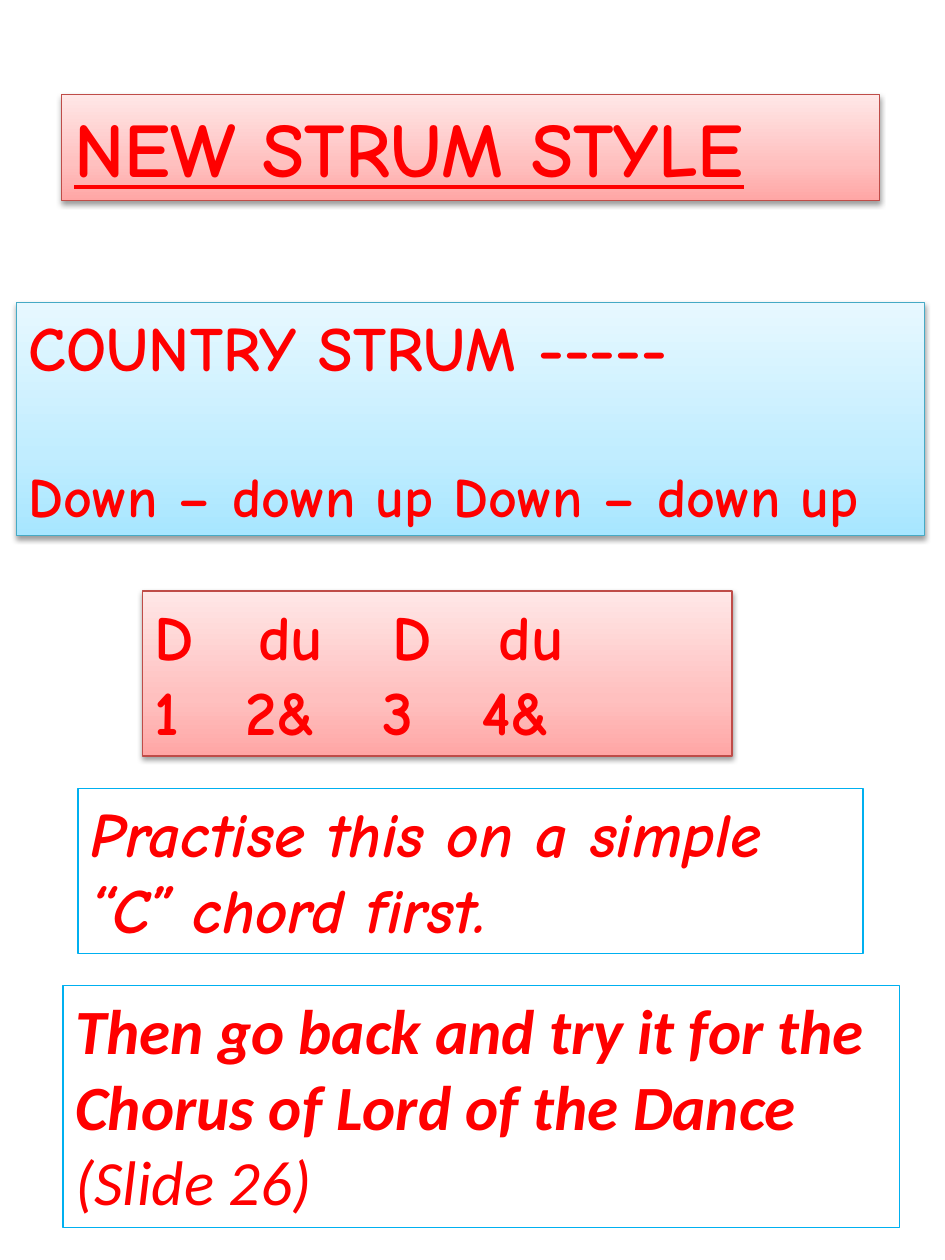
from copy import deepcopy

from lxml.etree import SubElement
from pptx import Presentation
from pptx.dml.color import RGBColor
from pptx.enum.text import MSO_ANCHOR, MSO_AUTO_SIZE, PP_ALIGN
from pptx.oxml.ns import qn
from pptx.util import Inches, Pt

COLORS = {"text": "FF0000", "red_line": "BF4C48", "blue_line": "46AAC5",
          "plain_line": "00B0F0", "shadow": "000000"}
RED = ("red_line", ((0, "FFA6A5"), (0.35, "FFC0BF"), (1, "FFE7E7")))
BLUE = ("blue_line", ((0, "A7E6FF"), (0.35, "C1EDFF"), (1, "E7F8FF")))
PLAIN = ("plain_line", ())
COMIC = "Comic Neue"
BOLD = {"bold": True}
ITALIC = {"bold": True, "italic": True}

TITLE = {"at": (0.49, 0.75, 6.49, 0.84), "look": RED, "font": COMIC,
         "lines": [("NEW STRUM STYLE", 44, {"bold": True, "underline": True})]}
BOXES = [
    {"at": (0.13, 2.4, 7.21, 1.85), "look": BLUE, "font": COMIC, "gap": 44,
     "lines": [("COUNTRY STRUM -----", 36, BOLD),
               ("Down – down up Down – down up", 32, BOLD)]},
    {"at": (1.13, 4.69, 4.68, 1.31), "look": RED, "font": COMIC,
     "tabs": [(0.82, 1.89, 2.73), (0.72, 1.81, 2.59)],
     "lines": [("D\tdu\tD\tdu", 36, BOLD), ("1\t2&\t3\t4&", 36, BOLD)]},
    {"at": (0.62, 6.26, 6.23, 1.31), "look": PLAIN, "font": COMIC,
     "lines": [("Practise this on a simple", 36, ITALIC),
               ("“C” chord first.", 36, ITALIC)]},
    {"at": (0.5, 7.82, 6.64, 1.92), "look": PLAIN, "font": "Calibri",
     "lines": [("Then go back and try it for the", 36, ITALIC),
               ("Chorus of Lord of the Dance", 36, ITALIC),
               ("(Slide 26)", 36, {"bold": False, "italic": True})]},
]


def rgb(name):
    return RGBColor.from_string(COLORS[name])


def add_shadow(shape):
    shape.shadow.inherit = False
    effects = shape._element.spPr.find(qn("a:effectLst"))
    shadow = SubElement(effects, qn("a:outerShdw"), blurRad=str(Pt(3.1)),
                        dist=str(Pt(1.6)), dir="5400000", rotWithShape="0")
    color = SubElement(shadow, qn("a:srgbClr"), val=COLORS["shadow"])
    SubElement(color, qn("a:alpha"), val="38000")


def paint(shape, line_color, stops):
    shape.line.color.rgb = rgb(line_color)
    shape.line.width = Pt(0.75)
    if not stops:
        return
    shape.fill.gradient()
    shape.fill.gradient_angle = 90
    stop_list = shape._element.spPr.find(".//" + qn("a:gsLst"))
    stop_list.append(deepcopy(stop_list[0]))
    for stop, (position, color) in zip(shape.fill.gradient_stops, stops):
        stop.position = position
        stop.color.rgb = RGBColor.from_string(color)
    add_shadow(shape)


def add_tabs(para, positions):
    tab_list = SubElement(para._p.get_or_add_pPr(), qn("a:tabLst"))
    for position in positions:
        SubElement(tab_list, qn("a:tab"), pos=str(Inches(position)), algn="l")


def write(shape, item):
    frame = shape.text_frame
    frame.text = "\n".join(text for text, _, _ in item["lines"])
    frame.word_wrap = True
    frame.auto_size = MSO_AUTO_SIZE.SHAPE_TO_FIT_TEXT
    frame.vertical_anchor = MSO_ANCHOR.TOP
    for index, (para, (_, size, style)) in enumerate(zip(frame.paragraphs, item["lines"])):
        if "tabs" in item:
            add_tabs(para, item["tabs"][index])
        para.alignment = PP_ALIGN.LEFT
        if index and "gap" in item:
            para.space_before = Pt(item["gap"])
        for span in para.runs:
            span.font.name = item["font"]
            span.font.size = Pt(size)
            span.font.color.rgb = rgb("text")
            for key, value in style.items():
                setattr(span.font, key, value)


def main():
    """Build the strum lesson slide."""
    deck = Presentation()
    deck.slide_width, deck.slide_height = Inches(7.5), Inches(10)
    page = deck.slides.add_slide(deck.slide_layouts[5])
    title = page.shapes.title
    title.left, title.top, title.width, title.height = map(Inches, TITLE["at"])
    paint(title, *TITLE["look"])
    write(title, TITLE)
    for item in BOXES:
        box = page.shapes.add_textbox(*map(Inches, item["at"]))
        paint(box, *item["look"])
        write(box, item)
    deck.save("out.pptx")


if __name__ == "__main__":
    main()
